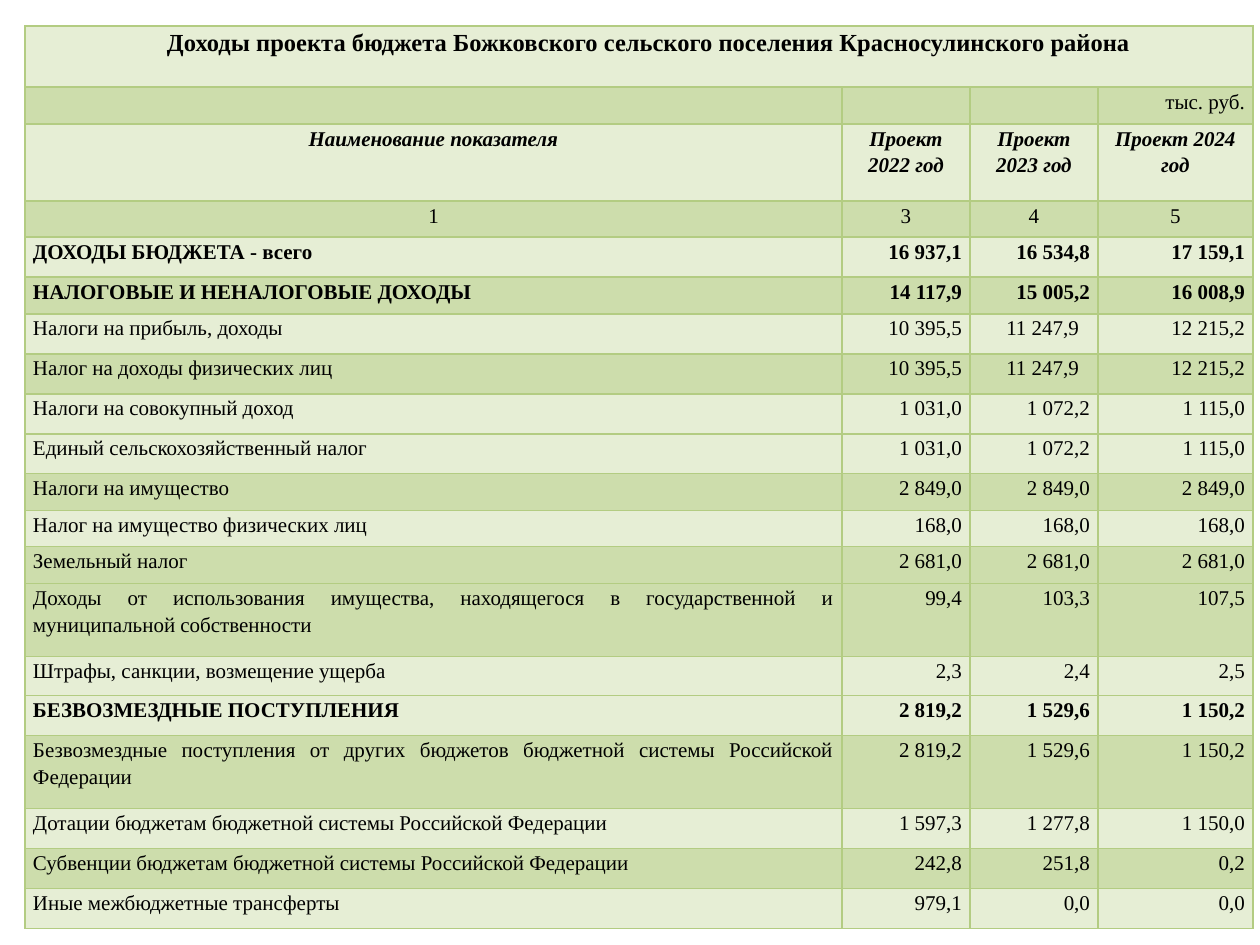
from lxml.etree import SubElement
from pptx import Presentation
from pptx.dml.color import RGBColor
from pptx.enum.text import PP_ALIGN as AL
from pptx.oxml.ns import qn
from pptx.util import Pt

SCALE = 914400 / 126  # EMU per px
BLACK = RGBColor(0x00, 0x00, 0x00)
LIGHT = RGBColor(0xE6, 0xEE, 0xD5)
DARK = RGBColor(0xCD, 0xDD, 0xAC)
BORDER = RGBColor(0xB3, 0xCC, 0x82)
FONT = "Times New Roman"

LEFT, TOP, INSET = 25, 26, 8
COL_WIDTHS = [817, 128, 128, 128]
ROW_HEIGHTS = [61, 37, 77, 36, 40, 37, 40, 40, 40, 40,
               37, 36, 37, 73, 39, 40, 73, 40, 40, 40]
DARK_ROWS = {1, 3, 5, 7, 10, 12, 13, 16, 18}
TITLE_INDENT = 134
SHIFTED_CELLS = {(6, 2), (7, 2)}  # numbers set a little off the right edge
SHIFT = 11

TITLE = "Доходы проекта бюджета Божковского сельского поселения Красносулинского района"
HEADER = ["Наименование показателя", "Проект 2022 год", "Проект 2023 год", "Проект 2024 год"]
FIRST_INCOME_ROW = 4
FIRST_JUSTIFIED_ROW = 13
BOLD_ROWS = {4, 5, 15}
INCOME = [
    ("ДОХОДЫ БЮДЖЕТА - всего", "16 937,1", "16 534,8", "17 159,1"),
    ("НАЛОГОВЫЕ И НЕНАЛОГОВЫЕ ДОХОДЫ", "14 117,9", "15 005,2", "16 008,9"),
    ("Налоги на прибыль, доходы", "10 395,5", "11 247,9", "12 215,2"),
    ("Налог на доходы физических лиц", "10 395,5", "11 247,9", "12 215,2"),
    ("Налоги на совокупный доход", "1 031,0", "1 072,2", "1 115,0"),
    ("Единый сельскохозяйственный налог", "1 031,0", "1 072,2", "1 115,0"),
    ("Налоги на имущество", "2 849,0", "2 849,0", "2 849,0"),
    ("Налог на имущество физических лиц", "168,0", "168,0", "168,0"),
    ("Земельный налог", "2 681,0", "2 681,0", "2 681,0"),
    ("Доходы от использования имущества, находящегося в государственной "
     "и муниципальной собственности", "99,4", "103,3", "107,5"),
    ("Штрафы, санкции, возмещение ущерба", "2,3", "2,4", "2,5"),
    ("БЕЗВОЗМЕЗДНЫЕ ПОСТУПЛЕНИЯ", "2 819,2", "1 529,6", "1 150,2"),
    ("Безвозмездные поступления от других бюджетов бюджетной системы "
     "Российской Федерации", "2 819,2", "1 529,6", "1 150,2"),
    ("Дотации бюджетам бюджетной системы Российской Федерации",
     "1 597,3", "1 277,8", "1 150,0"),
    ("Субвенции бюджетам бюджетной системы Российской Федерации",
     "242,8", "251,8", "0,2"),
    ("Иные межбюджетные трансферты", "979,1", "0,0", "0,0"),
]


def px(n):
    return round(n * SCALE)


def add_borders(cell):
    tc_pr = cell._tc.get_or_add_tcPr()
    for side in ("lnL", "lnR", "lnT", "lnB"):
        ln = SubElement(tc_pr, qn(f"a:{side}"), w=str(Pt(1)))
        fill = SubElement(ln, qn("a:solidFill"))
        SubElement(fill, qn("a:srgbClr"), val=str(BORDER))


def style_cell(cell, color):
    add_borders(cell)
    cell.fill.solid()
    cell.fill.fore_color.rgb = color
    margins = {"margin_left": px(INSET), "margin_right": px(INSET),
               "margin_top": 0, "margin_bottom": 0}
    for name, value in margins.items():
        setattr(cell, name, value)


def write_cell(cell, text, align=AL.LEFT, size=12, bold=False, italic=False):
    p = cell.text_frame.paragraphs[0]
    p.alignment, p.line_spacing = align, 1.15
    if not text:  # keeps an empty row from growing
        SubElement(p._p, qn("a:endParaRPr"), sz=str(size * 100))
        return
    r = p.add_run()
    r.text = text
    font = {"name": FONT, "size": Pt(size), "bold": bold, "italic": italic}
    for name, value in font.items():
        setattr(r.font, name, value)
    r.font.color.rgb = BLACK


def write_row(table, row, texts, aligns, **font):
    for col, (text, align) in enumerate(zip(texts, aligns)):
        write_cell(table.cell(row, col), text, align, **font)


def add_grid(slide):
    shape = slide.shapes.add_table(
        len(ROW_HEIGHTS), len(COL_WIDTHS), px(LEFT), px(TOP),
        px(sum(COL_WIDTHS)), px(sum(ROW_HEIGHTS)))
    table = shape.table
    table.first_row = table.horz_banding = False
    for column, width in zip(table.columns, COL_WIDTHS):
        column.width = px(width)
    for i, (row, height) in enumerate(zip(table.rows, ROW_HEIGHTS)):
        row.height = px(height)
        for cell in row.cells:
            style_cell(cell, DARK if i in DARK_ROWS else LIGHT)
    return table


def main():
    prs = Presentation()
    prs.slide_width, prs.slide_height = px(1260), px(945)
    slide = prs.slides.add_slide(prs.slide_layouts[6])
    table = add_grid(slide)

    # Title across all columns
    title = table.cell(0, 0)
    title.merge(table.cell(0, 3))
    title.margin_left = px(INSET + TITLE_INDENT)
    write_cell(title, TITLE, size=14, bold=True)

    # Unit, column heads and column numbers
    write_row(table, 1, ["", "", "", "тыс. руб."], [AL.RIGHT] * 4)
    write_row(table, 2, HEADER, [AL.CENTER] * 4, bold=True, italic=True)
    write_row(table, 3, "1345", [AL.CENTER] * 4)

    # Income lines
    for row, texts in enumerate(INCOME, FIRST_INCOME_ROW):
        label = AL.JUSTIFY if row >= FIRST_JUSTIFIED_ROW else AL.LEFT
        write_row(table, row, texts, [label] + [AL.RIGHT] * 3, bold=row in BOLD_ROWS)
    for row, col in SHIFTED_CELLS:
        table.cell(row, col).margin_right = px(INSET + SHIFT)

    prs.save("out.pptx")


if __name__ == "__main__":
    main()
